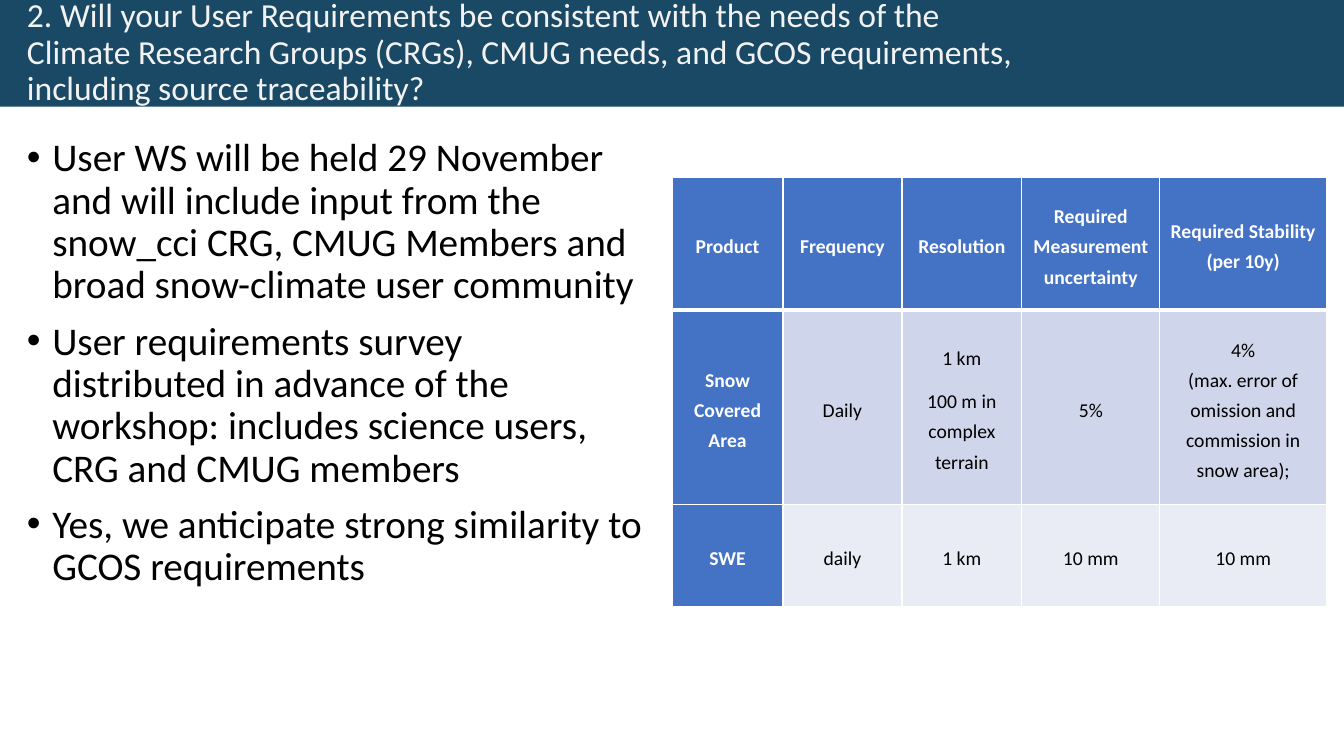
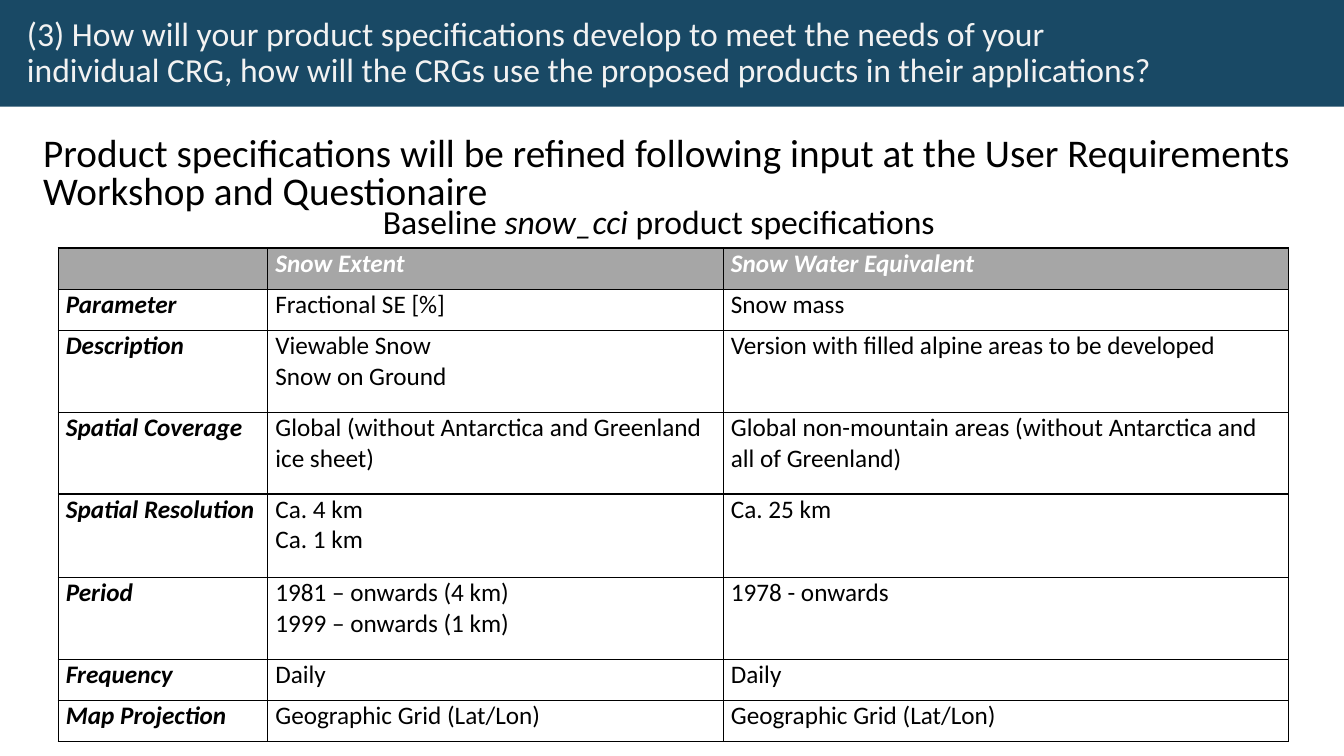
from dataclasses import dataclass, field
from typing import Callable, Optional

from lxml.etree import SubElement
from pptx import Presentation
from pptx.dml.color import RGBColor
from pptx.enum.shapes import MSO_SHAPE
from pptx.enum.text import MSO_ANCHOR, PP_ALIGN
from pptx.oxml import parse_xml
from pptx.oxml.ns import nsdecls, qn
from pptx.util import Cm, Pt

FONT = "Calibri"
NAVY = RGBColor(0x19, 0x49, 0x65)
PALE_GREY = RGBColor(0xF2, 0xF2, 0xF2)
BLACK = RGBColor(0x00, 0x00, 0x00)
WHITE = RGBColor(0xFF, 0xFF, 0xFF)
BLUE = RGBColor(0x44, 0x72, 0xC4)
LIGHT_BLUE = RGBColor(0xCF, 0xD5, 0xEA)
PALE_BLUE = RGBColor(0xE9, 0xEB, 0xF5)
GREY = RGBColor(0xA6, 0xA6, 0xA6)

SLIDE_WIDTH, SLIDE_HEIGHT = Cm(33.87), Cm(19.05)
BAND_HEIGHT = Cm(2.69)
BULLET_INDENT = Cm(0.64)
CELL_MARGINS = {"margin_left": Cm(0.19), "margin_right": Cm(0.19),
                "margin_top": 0, "margin_bottom": 0}


@dataclass
class TextStyle:
    size: float
    color: RGBColor = BLACK
    bold: bool = False
    italic: bool = False
    bulleted: bool = False
    gap: float = 0
    layout: dict = field(default_factory=dict)


@dataclass
class Span:
    text: str
    italic: bool = False


@dataclass
class CellLook:
    style: TextStyle
    fill: Optional[RGBColor] = None
    top: float = 1
    bottom: float = 1


@dataclass
class TableSpec:
    left: float
    top: float
    columns: list[float]
    heights: list[float]
    rows: list[list[str]]
    look: Callable[[int, int], CellLook]
    border: RGBColor
    anchor: MSO_ANCHOR


TITLE = TextStyle(24, PALE_GREY, layout={"line_spacing": 0.9})
BULLETS = TextStyle(28, bulleted=True, gap=10, layout={"line_spacing": 0.9})
LEAD = TextStyle(28, layout={"line_spacing": 0.8})
CAPTION = TextStyle(24)
CENTRED = {"alignment": PP_ALIGN.CENTER, "line_spacing": Pt(21.6)}
NEED_HEAD = TextStyle(14, WHITE, bold=True, gap=9, layout=CENTRED)
NEED_BODY = TextStyle(14, gap=9, layout=CENTRED)
SPEC_HEAD = TextStyle(18, WHITE, bold=True, italic=True)
SPEC_LABEL = TextStyle(18, bold=True, italic=True)
SPEC_BODY = TextStyle(18)


def set_all(target, values: dict) -> None:
    for name, value in values.items():
        setattr(target, name, value)


def add_bullet(para) -> None:
    properties = para._p.get_or_add_pPr()
    properties.set("marL", str(BULLET_INDENT))
    properties.set("indent", str(-BULLET_INDENT))
    SubElement(properties, qn("a:buFont")).set("typeface", "Arial")
    SubElement(properties, qn("a:buChar")).set("char", "•")


def write(frame, paragraphs: list[list[Span]], style: TextStyle) -> None:
    """Fill a frame with paragraphs; a newline in a span is a line break."""
    for number, spans in enumerate(paragraphs):
        para = frame.add_paragraph() if number else frame.paragraphs[0]
        if style.bulleted:
            add_bullet(para)
        set_all(para, style.layout)
        if number:
            para.space_before = Pt(style.gap)
        for span in spans:
            for line_number, line in enumerate(span.text.split("\n")):
                if line_number:
                    para.add_line_break()
                run = para.add_run()
                run.text = line
                set_all(run.font, {"name": FONT, "size": Pt(style.size),
                                   "bold": style.bold,
                                   "italic": style.italic or span.italic})
                run.font.color.rgb = style.color


def plain(*texts: str) -> list[list[Span]]:
    return [[Span(text)] for text in texts]


def add_text(page, left: float, top: float, width: float, height: float,
             paragraphs: list[list[Span]], style: TextStyle,
             anchor: MSO_ANCHOR = MSO_ANCHOR.TOP) -> None:
    box = page.shapes.add_textbox(Cm(left), Cm(top), Cm(width), Cm(height))
    set_all(box.text_frame, {"word_wrap": True, "vertical_anchor": anchor})
    write(box.text_frame, paragraphs, style)


def add_page(deck, title: str, title_width: float):
    """Add a blank page with the navy band and its title."""
    page = deck.slides.add_slide(deck.slide_layouts[6])
    band = page.shapes.add_shape(MSO_SHAPE.RECTANGLE, 0, 0,
                                 SLIDE_WIDTH, BAND_HEIGHT)
    band.shadow.inherit = False
    band.fill.solid()
    band.fill.fore_color.rgb = NAVY
    band.line.fill.background()
    add_text(page, 0.43, 0, title_width, BAND_HEIGHT.cm, plain(title), TITLE,
             MSO_ANCHOR.MIDDLE)
    return page


def set_borders(cell, color: RGBColor, top: float, bottom: float) -> None:
    properties = cell._tc.get_or_add_tcPr()
    sides = {"lnL": 1, "lnR": 1, "lnT": top, "lnB": bottom}
    for place, (side, width) in enumerate(sides.items()):
        properties.insert(place, parse_xml(
            f'<a:{side} {nsdecls("a")} w="{Pt(width)}"><a:solidFill>'
            f'<a:srgbClr val="{color}"/></a:solidFill></a:{side}>'))


def add_grid(page, spec: TableSpec) -> None:
    table = page.shapes.add_table(
        len(spec.heights), len(spec.columns), Cm(spec.left), Cm(spec.top),
        Cm(sum(spec.columns)), Cm(sum(spec.heights))).table
    for column, width in zip(table.columns, spec.columns):
        column.width = Cm(width)
    for row, height in zip(table.rows, spec.heights):
        row.height = Cm(height)
    for row_number, texts in enumerate(spec.rows):
        for column_number, text in enumerate(texts):
            cell = table.cell(row_number, column_number)
            look = spec.look(row_number, column_number)
            set_all(cell, {**CELL_MARGINS, "vertical_anchor": spec.anchor})
            if look.fill is None:
                cell.fill.background()
            else:
                cell.fill.solid()
                cell.fill.fore_color.rgb = look.fill
            set_borders(cell, spec.border, look.top, look.bottom)
            if text:
                write(cell.text_frame, plain(*text.split("|")), look.style)


def need_look(row: int, column: int) -> CellLook:
    top = 3 if row == 1 else 1
    if row == 0:
        return CellLook(NEED_HEAD, BLUE, bottom=3)
    if column == 0:
        return CellLook(NEED_HEAD, BLUE, top=top)
    return CellLook(NEED_BODY, LIGHT_BLUE if row % 2 else PALE_BLUE, top=top)


def spec_look(row: int, column: int) -> CellLook:
    if row == 0:
        return CellLook(SPEC_HEAD, GREY)
    return CellLook(SPEC_BODY if column else SPEC_LABEL)


# A bar in a cell's text parts its paragraphs.
REQUIREMENTS = TableSpec(
    16.94, 4.47, [2.79, 3.0, 3.02, 3.48, 4.2], [3.35, 4.9, 2.57],
    [["Product", "Frequency", "Resolution",
      "Required Measurement uncertainty", "Required Stability (per 10y)"],
     ["Snow Covered Area", "Daily", "1 km|100 m in complex terrain", "5%",
      "4%\n(max. error of omission and commission in snow area);"],
     ["SWE", "daily", "1 km", "10 mm", "10 mm"]],
    need_look, WHITE, MSO_ANCHOR.MIDDLE)

SPECIFICATIONS = TableSpec(
    1.47, 6.25, [5.28, 11.48, 14.25],
    [1.04, 1.04, 2.06, 2.06, 2.1, 2.06, 1.04, 1.04],
    [["", "Snow Extent", "Snow Water Equivalent"],
     ["Parameter", "Fractional SE [%]", "Snow mass"],
     ["Description", "Viewable Snow|Snow on Ground",
      "Version with filled alpine areas to be developed"],
     ["Spatial Coverage",
      "Global (without Antarctica and Greenland ice sheet)",
      "Global non-mountain areas (without Antarctica and all of Greenland)"],
     ["Spatial Resolution", "Ca. 4 km|Ca. 1 km", "Ca. 25 km"],
     ["Period", "1981 – onwards (4 km)\n1999 – onwards (1 km)",
      "1978 - onwards"],
     ["Frequency", "Daily", "Daily"],
     ["Map Projection", "Geographic Grid (Lat/Lon)",
      "Geographic Grid (Lat/Lon)"]],
    spec_look, BLACK, MSO_ANCHOR.TOP)


def add_requirements_page(deck) -> None:
    page = add_page(
        deck, "2. Will your User Requirements be consistent with the needs "
        "of the Climate Research Groups (CRGs), CMUG needs, and GCOS "
        "requirements, including source traceability?", 25.43)
    add_text(page, 0.43, 3.35, 16.08, 14.73, plain(
        "User WS will be held 29 November and will include input from the "
        "snow_cci CRG, CMUG Members and broad snow-climate user community",
        "User requirements survey distributed in advance of the workshop: "
        "includes science users, CRG and CMUG members",
        "Yes, we anticipate strong similarity to GCOS requirements"), BULLETS)
    add_grid(page, REQUIREMENTS)


def add_specifications_page(deck) -> None:
    page = add_page(
        deck, "(3) How will your product specifications develop to meet the "
        "needs of your\nindividual CRG, how will the CRGs use the proposed "
        "products in their applications?", 29.41)
    add_text(page, 0.84, 3.35, 32.26, 2.24, plain(
        "Product specifications will be refined following input at the User "
        "Requirements Workshop and Questionaire"), LEAD)
    add_grid(page, SPECIFICATIONS)
    add_text(page, 9.4, 4.95, 18.8, 1.27, [[
        Span("Baseline "), Span("snow_cci ", italic=True),
        Span("product specifications")]], CAPTION)


def main() -> None:
    deck = Presentation()
    set_all(deck, {"slide_width": SLIDE_WIDTH, "slide_height": SLIDE_HEIGHT})
    add_requirements_page(deck)
    add_specifications_page(deck)
    deck.save("out.pptx")


if __name__ == "__main__":
    main()
